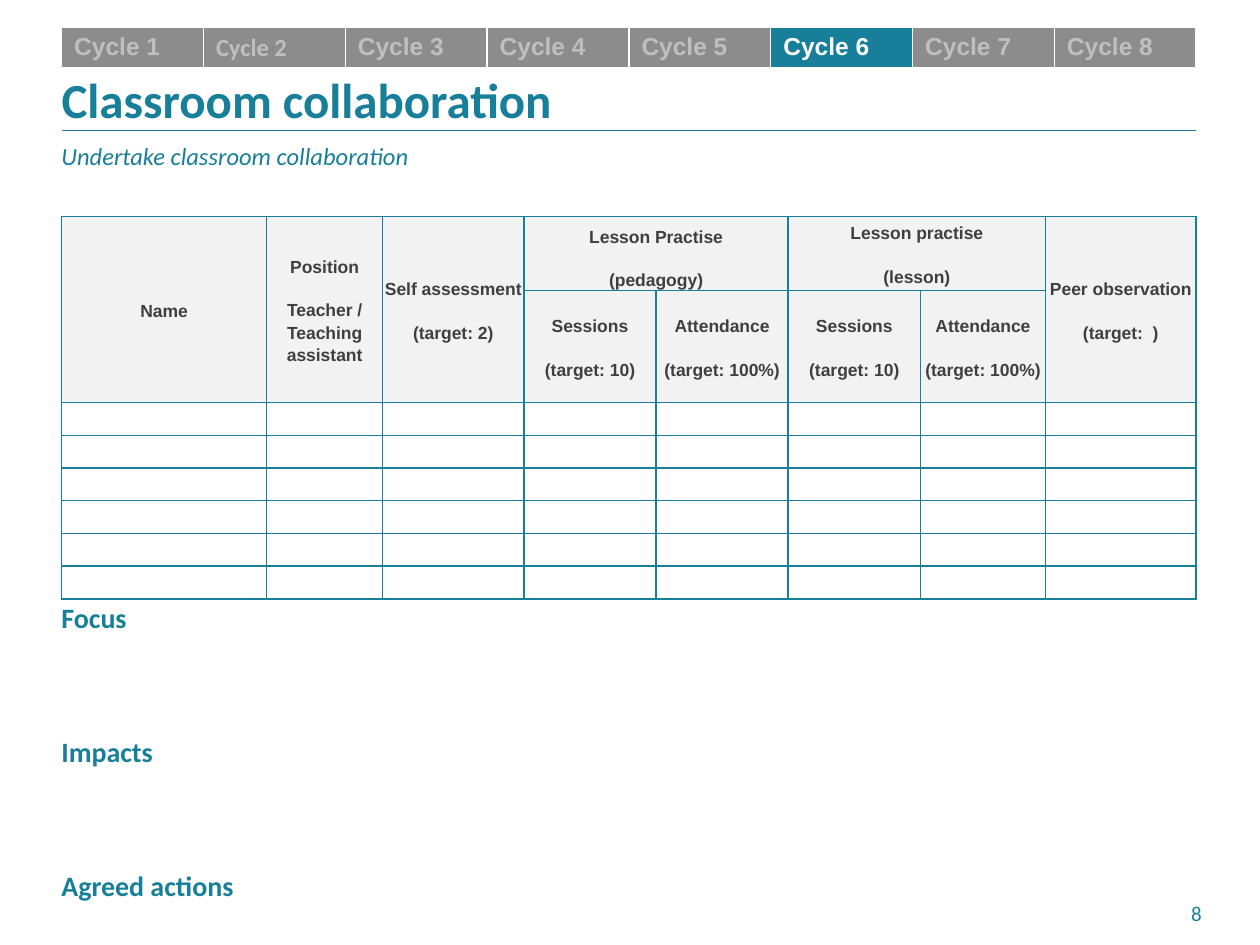
from lxml import etree
from pptx import Presentation
from pptx.dml.color import RGBColor
from pptx.enum.shapes import MSO_CONNECTOR
from pptx.enum.text import MSO_ANCHOR, PP_ALIGN
from pptx.oxml.ns import qn
from pptx.util import Pt

LINE = MSO_CONNECTOR.STRAIGHT
LEFT, CENTER = PP_ALIGN.LEFT, PP_ALIGN.CENTER
MIDDLE, BOTTOM = MSO_ANCHOR.MIDDLE, MSO_ANCHOR.BOTTOM

TEAL = RGBColor(0x17, 0x7F, 0x99)
GREY = RGBColor(0x8C, 0x8C, 0x8C)
SILVER = RGBColor(0xBF, 0xBF, 0xBF)
PALE = RGBColor(0xF2, 0xF2, 0xF2)
DARK = RGBColor(0x3F, 0x3F, 0x3F)
WHITE = RGBColor(0xFF, 0xFF, 0xFF)

# Content
CYCLES = [f"Cycle {n}" for n in range(1, 9)]
ACTIVE = "Cycle 6"
FONTS = {"Cycle 2": "Calibri"}
TITLE = "Classroom collaboration"
SUB = "Undertake classroom collaboration"
HEADS = ["Focus", "Impacts", "Agreed actions"]
PAGE = "8"

# Header cells: row, column, rows spanned, columns spanned, text, anchor
HEADER = [
    (0, 0, 2, 1, "Name", MIDDLE),
    (0, 1, 2, 1, "Position\nTeacher / Teaching assistant", MIDDLE),
    (0, 2, 2, 1, "Self assessment\n(target: 2)", MIDDLE),
    (0, 3, 1, 2, "Lesson Practise\n(pedagogy)", BOTTOM),
    (0, 5, 1, 2, "Lesson practise\n(lesson)", MIDDLE),
    (0, 7, 2, 1, "Peer observation\n(target:  )", MIDDLE),
    (1, 3, 1, 1, "Sessions\n(target: 10)", MIDDLE),
    (1, 4, 1, 1, "Attendance\n(target: 100%)", MIDDLE),
    (1, 5, 1, 1, "Sessions\n(target: 10)", MIDDLE),
    (1, 6, 1, 1, "Attendance\n(target: 100%)", MIDDLE),
]
COLS = [117.2, 66.2, 80.8, 75.5, 75.5, 75.6, 71.5, 86]
# The second header row grows to about 68 with its text
ROWS = [42.3, 64] + [18.7] * 6

# Layout
X, WIDTH = 35.2, 648.5
PAD = 7.2


def style(para, size, color, font="Calibri", bold=False, italic=False):
    for run in para.runs:
        run.font.size = Pt(size)
        run.font.name = font
        run.font.bold = bold
        run.font.italic = italic
        run.font.color.rgb = color


def add_text(slide, box, lines, size, pad=0, align=LEFT, gap=0, **look):
    frame = slide.shapes.add_textbox(*map(Pt, box)).text_frame
    frame.word_wrap = True
    frame.margin_left = frame.margin_right = Pt(pad)
    frame.margin_top = frame.margin_bottom = Pt(pad / 2)
    frame.text = "\n".join(lines)
    for i, para in enumerate(frame.paragraphs):
        para.alignment = align
        para.space_before = Pt(gap if i else 0)
        style(para, size, TEAL, **look)


def add_grid(slide, top, cols, rows):
    grid = slide.shapes.add_table(
        len(rows), len(cols), Pt(X), Pt(top), Pt(sum(cols)), Pt(sum(rows))
    ).table
    grid.first_row = grid.horz_banding = False
    for col, width in zip(grid.columns, cols):
        col.width = Pt(width)
    for row, height in zip(grid.rows, rows):
        row.height = Pt(height)
    return grid


def paint(cell, fill, edge, bottom=1):
    props = cell._tc.get_or_add_tcPr()
    for side, width in (("L", 1), ("R", 1), ("T", 1), ("B", bottom)):
        line = etree.SubElement(props, qn(f"a:ln{side}"), w=str(Pt(width)))
        solid = etree.SubElement(line, qn("a:solidFill"))
        etree.SubElement(solid, qn("a:srgbClr"), val=str(edge))
    cell.fill.solid()
    cell.fill.fore_color.rgb = fill


def add_tabs(slide):
    grid = add_grid(slide, 15.4, [WIDTH / len(CYCLES)] * len(CYCLES), [24.2])
    for cell, name in zip(grid.rows[0].cells, CYCLES):
        on = name == ACTIVE
        paint(cell, TEAL if on else GREY, WHITE, 3)
        cell.text_frame.text = name
        style(cell.text_frame.paragraphs[0], 14, WHITE if on else SILVER,
              FONTS.get(name, "Arial"), bold=True)


def add_record(slide):
    grid = add_grid(slide, 123.7, COLS, ROWS)
    for r in range(len(ROWS)):
        for cell in grid.rows[r].cells:
            paint(cell, PALE if r < 2 else WHITE, TEAL)
            cell.margin_left = cell.margin_right = cell.margin_top = Pt(0.7)
            cell.margin_bottom = 0
            # Small type keeps the blank rows low
            etree.SubElement(cell.text_frame.paragraphs[0]._p,
                             qn("a:endParaRPr"), sz="1000")
    for r, c, down, across, text, anchor in HEADER:
        cell = grid.cell(r, c)
        if down * across > 1:
            cell.merge(grid.cell(r + down - 1, c + across - 1))
        cell.vertical_anchor = anchor
        cell.text_frame.text = text
        for para in cell.text_frame.paragraphs:
            para.alignment = CENTER
            para.line_spacing = 1.15
            para.space_before = para.space_after = Pt(6)
            style(para, 10, DARK, "Arial", bold=True)


def main():
    deck = Presentation()
    deck.slide_width, deck.slide_height = Pt(720), Pt(540)
    slide = deck.slides.add_slide(deck.slide_layouts[6])

    # Rule under the title
    rule = slide.shapes.add_connector(
        LINE, Pt(X), Pt(74.6), Pt(X + WIDTH), Pt(74.6))
    rule.line.color.rgb = TEAL
    rule.line.width = Pt(1)
    etree.SubElement(rule._element.spPr, qn("a:effectLst"))

    # Tables
    add_tabs(slide)
    add_record(slide)

    # Text
    add_text(slide, (661, 514.8, 45.4, 25.2), [PAGE], 12, align=CENTER)
    add_text(slide, (X - PAD, 77, 663.8, 24.5), [SUB], 14, PAD, italic=True)
    add_text(slide, (X - PAD, 339.8, 663.8, 181.4), HEADS, 16, PAD,
             gap=57.3, bold=True)
    add_text(slide, (X, 39.6, WIDTH, 33.8), [TITLE], 28, bold=True)
    deck.save("out.pptx")


if __name__ == "__main__":
    main()
